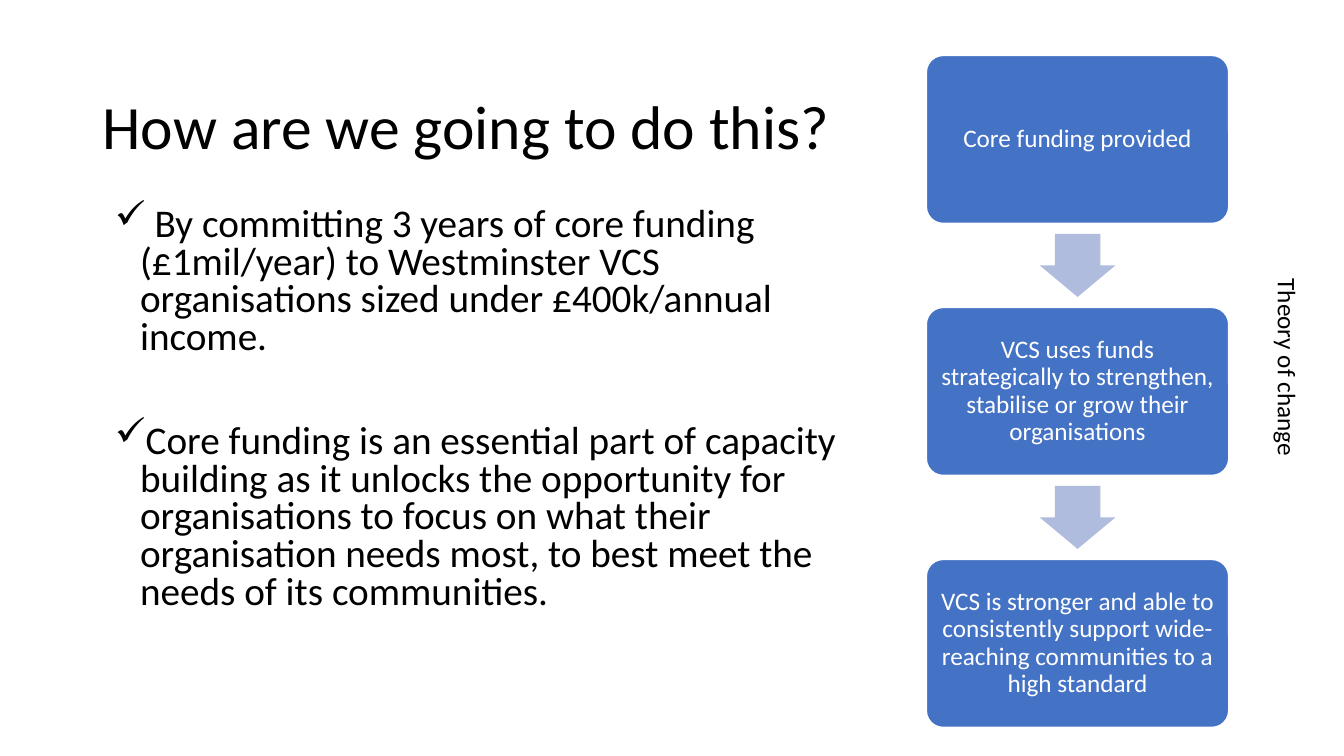
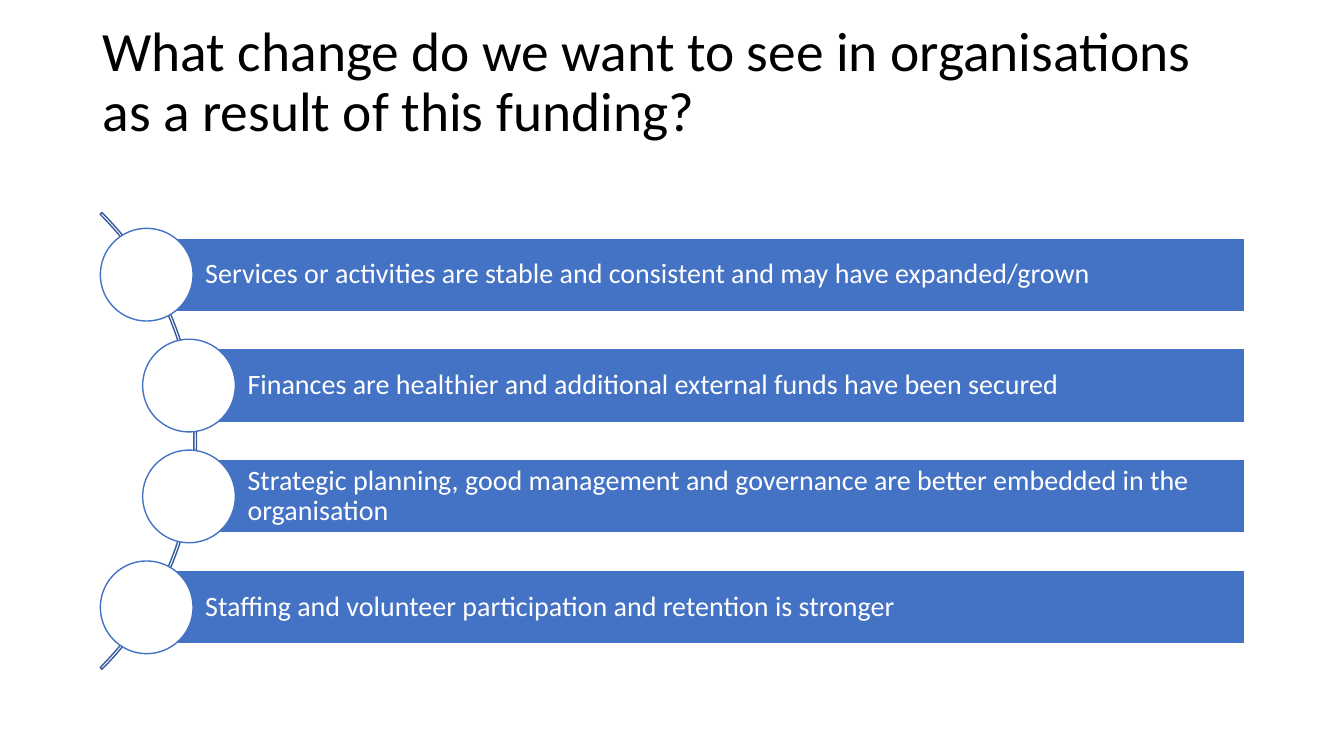
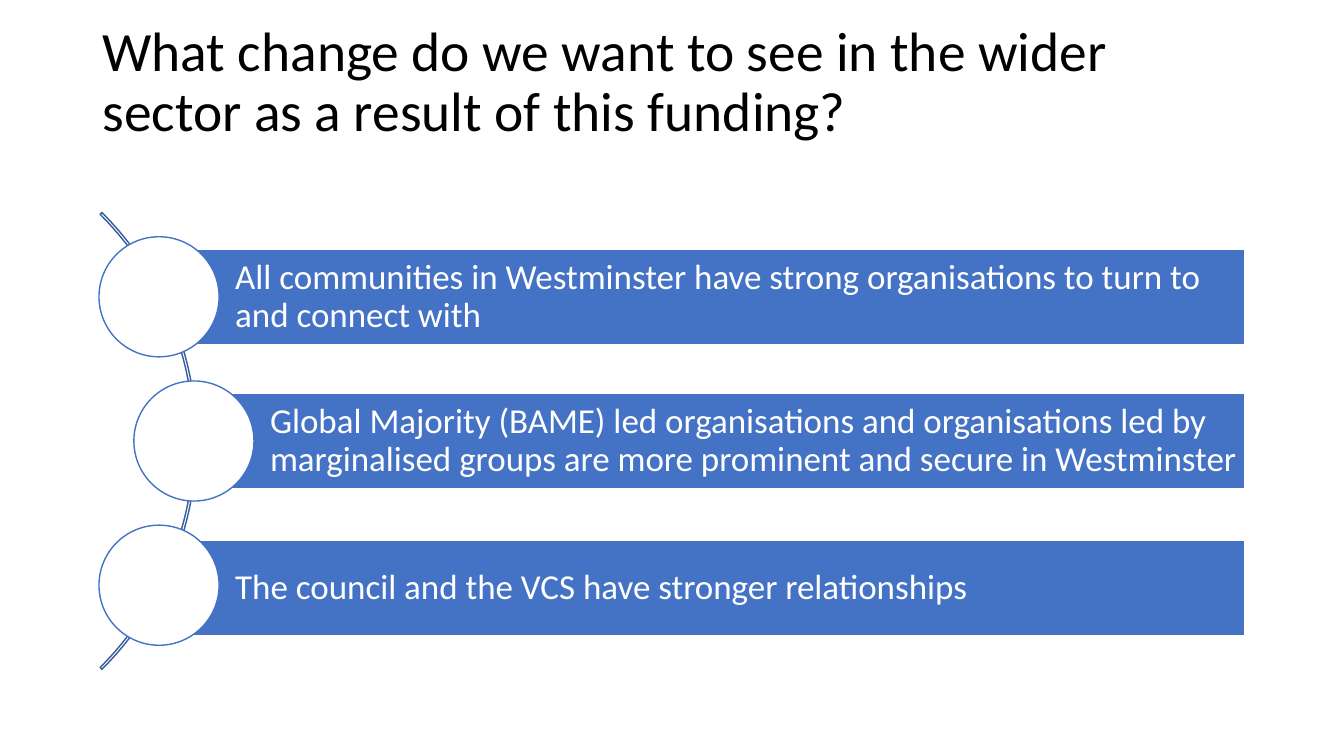
from pptx import Presentation
from pptx.util import Pt
from pptx.dml.color import RGBColor
from pptx.enum.shapes import MSO_SHAPE
from pptx.enum.text import MSO_ANCHOR, MSO_AUTO_SIZE, PP_ALIGN
from lxml import etree

HUES = {"blue": "4472C4", "pale": "B0BCDE", "edge": "365B9D",
        "white": "FFFFFF", "black": "000000"}
FONT = "Calibri"
SPACE = 0.9

deck = Presentation()
deck.slide_width, deck.slide_height = Pt(960), Pt(540)


def write(para, text, size, hue, space=SPACE, align=PP_ALIGN.LEFT):
    para.line_spacing = space
    para.alignment = align
    run = para.add_run()
    run.text = text
    run.font.name = FONT
    run.font.size = Pt(size)
    run.font.color.rgb = RGBColor.from_string(HUES[hue])


def draw(slide, kind, box, fill=None, line=None):
    shape = slide.shapes.add_shape(kind, *[Pt(n) for n in box])
    shape.shadow.inherit = False
    if fill:
        shape.fill.solid()
        shape.fill.fore_color.rgb = RGBColor.from_string(HUES[fill])
    else:
        shape.fill.background()
    if line:
        shape.line.color.rgb = RGBColor.from_string(HUES[line])
        shape.line.width = Pt(1)
    else:
        shape.line.fill.background()
    return shape


# Titles: text, size, box
heads = [
    ("How are we going to do this?", 44, (66, 40.2, 554, 104.4)),
    ("What change do we want to see in organisations as a result of this funding?",
     39.6, (66, 7.2, 828, 104.4)),
    ("What change do we want to see in the wider sector as a result of this funding?",
     39.6, (66, 7.2, 828, 104.4)),
]
slides = []
for text, size, box in heads:
    slide = deck.slides.add_slide(deck.slide_layouts[5])
    title = slide.shapes.title
    title.left, title.top, title.width, title.height = [Pt(n) for n in box]
    frame = title.text_frame
    frame.auto_size = MSO_AUTO_SIZE.NONE
    frame.vertical_anchor = MSO_ANCHOR.MIDDLE
    write(frame.paragraphs[0], text, size, "black")
    slides.append(slide)

# Slide 1: ticked points, with the space before each
plan = slides[0]
points = [
    (" By committing 3 years of core funding (£1mil/year) to Westminster VCS "
     "organisations sized under £400k/annual income.", 10),
    ("Core funding is an essential part of capacity building as it unlocks the "
     "opportunity for organisations to focus on what their organisation needs "
     "most, to best meet the needs of its communities.", 47.4),
]
frame = plan.shapes.add_textbox(Pt(75), Pt(144.6), Pt(535), Pt(325.4)).text_frame
frame.word_wrap = True
for i, (text, gap) in enumerate(points):
    para = frame.add_paragraph() if i else frame.paragraphs[0]
    write(para, text, 28, "black", 0.8)
    para.space_before = Pt(gap)
    props = para._p.get_or_add_pPr()
    props.set("marL", str(Pt(18)))
    props.set("indent", str(-Pt(18)))
    tick = etree.SubElement(
        props, "{http://schemas.openxmlformats.org/drawingml/2006/main}buChar")
    tick.set("char", "✓")

# Slide 1: flow of steps
steps = [
    "Core funding provided",
    "VCS uses funds strategically to strengthen, stabilise or grow their organisations",
    "VCS is stronger and able to consistently support wide-reaching communities "
    "to a high standard",
]
left, wide, high, pitch = 661.7, 216, 120, 180
for i, text in enumerate(steps):
    top = 39.6 + i * pitch
    step = draw(plan, MSO_SHAPE.ROUNDED_RECTANGLE, (left, top, wide, high),
                "blue", "white")
    step.adjustments[0] = 0.1
    frame = step.text_frame
    frame.word_wrap = True
    frame.vertical_anchor = MSO_ANCHOR.MIDDLE
    frame.margin_left = frame.margin_right = Pt(5.4)
    frame.margin_top = frame.margin_bottom = Pt(5.4)
    write(frame.paragraphs[0], text, 18, "white", align=PP_ALIGN.CENTER)
    if i < len(steps) - 1:
        arrow = draw(plan, MSO_SHAPE.DOWN_ARROW,
                     (left + wide / 2 - 27, top + high + 7.5, 54, 45), "pale")
        arrow.adjustments[0] = 0.6
        arrow.adjustments[1] = 0.5

# Slide 1: side label
label = plan.shapes.add_textbox(Pt(788.4), Pt(308.9), Pt(262.8), Pt(28.8))
label.rotation = 90
label.text_frame.word_wrap = True
write(label.text_frame.paragraphs[0], "Theory of change", 18, "black", 1)

# Slides 2 and 3: bars along an arc
# slide, first centre, pitch, bar height, circle, text indent, margin, size,
# rows of (circle centre, bar shift, text)
lists = [
    (slides[1], 196.2, 79.2, 52.5, 66.2, 41.8, 4, 20, [
        (104.8, 0, "Services or activities are stable and consistent and may have "
                   "expanded/grown"),
        (135, 0, "Finances are healthier and additional external funds have been "
                 "secured"),
        (135, 0, "Strategic planning, good management and governance are better "
                 "embedded in the organisation"),
        (104.8, 0, "Staffing and volunteer participation and retention is stronger"),
    ]),
    (slides[2], 212, 103, 68.2, 85.8, 54.4, 5, 25, [
        (113.6, 0, "All communities in Westminster have strong organisations to "
                   "turn to and connect with"),
        (138.5, 0, "Global Majority (BAME) led organisations and organisations led "
                   "by marginalised groups are more prominent and secure in "
                   "Westminster"),
        (113.6, 2, "The council and the VCS have stronger relationships"),
    ]),
]
right = 889.2
for slide, first, pitch, high, disc, inset, edge, size, rows in lists:
    arc = draw(slide, MSO_SHAPE.BLOCK_ARC, (-321.1, 84.2, 461.5, 461.5), None, "edge")
    for i, value in enumerate((189, 27, 0.004)):
        arc.adjustments[i] = value
    for i, (x, shift, text) in enumerate(rows):
        y = first + i * pitch
        bar = draw(slide, MSO_SHAPE.RECTANGLE,
                   (x, y + shift - high / 2, right - x, high), "blue", "white")
        frame = bar.text_frame
        frame.word_wrap = True
        frame.vertical_anchor = MSO_ANCHOR.MIDDLE
        frame.margin_left = Pt(inset)
        frame.margin_right = frame.margin_top = frame.margin_bottom = Pt(edge)
        write(frame.paragraphs[0], text, size, "white")
        draw(slide, MSO_SHAPE.OVAL, (x - disc / 2, y - disc / 2, disc, disc),
             "white", "blue")

deck.save("out.pptx")
